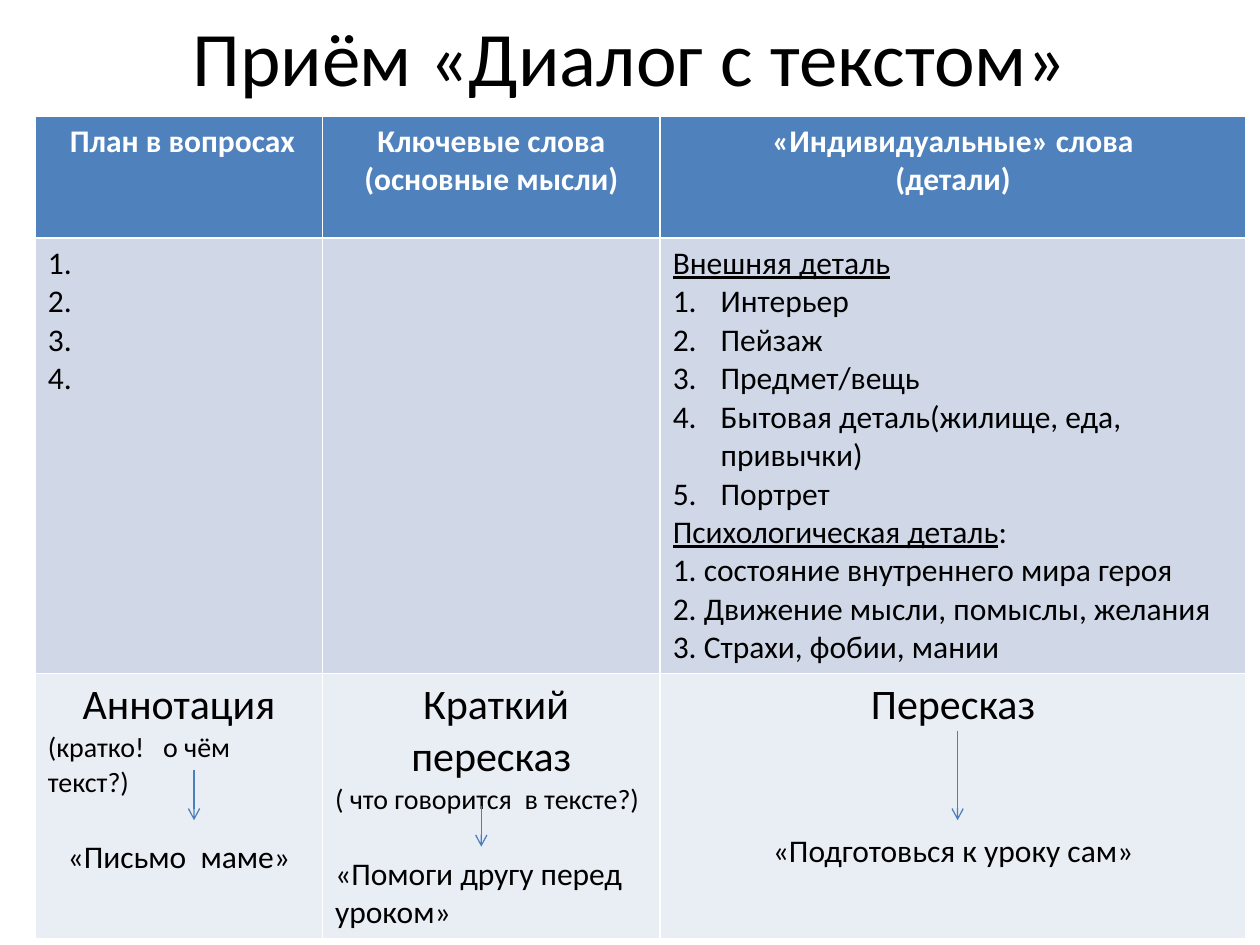
"""Build the slide on the "dialogue with the text" reading technique."""
from dataclasses import dataclass

from lxml import etree
from pptx import Presentation
from pptx.dml.color import RGBColor
from pptx.enum import shapes, text
from pptx.oxml import ns
from pptx.util import Inches, Pt


@dataclass(frozen=True)
class Theme:
    font: str = "Calibri"
    ink: str = "000000"
    header_ink: str = "FFFFFF"
    row_fills: tuple = ("4F81BD", "D0D8E8", "E9EDF4")
    arrow: str = "4B7EBC"
    title: int = 44
    heading: int = 24
    body: int = 18
    note: int = 16


theme = Theme()
CENTER, LEFT = text.PP_ALIGN.CENTER, text.PP_ALIGN.LEFT


def add_run(paragraph, content, size, color=theme.ink, bold=False, underline=False):
    run = paragraph.add_run()
    run.text = content
    font = run.font
    font.name, font.size, font.bold, font.underline = theme.font, Pt(size), bold, underline
    font.color.rgb = RGBColor.from_string(color)


def add_paragraph(frame, alignment=LEFT, gap=0):
    first = frame.paragraphs[0]
    paragraph = frame.add_paragraph() if first.runs else first
    paragraph.alignment = alignment
    if gap:
        paragraph.space_before = Pt(gap)
    return paragraph


presentation = Presentation()
presentation.slide_width, presentation.slide_height = Inches(10), Inches(7.5)
slide = presentation.slides.add_slide(presentation.slide_layouts[5])

title = slide.shapes.title
title.left, title.top = Inches(0.5), Inches(-0.11)
title.width, title.height = Inches(9), Inches(1.1)
title.text_frame.vertical_anchor = text.MSO_ANCHOR.MIDDLE
add_run(add_paragraph(title.text_frame, CENTER), "Приём «Диалог с текстом»", theme.title)

column_widths = (2.28, 2.68, 4.65)
row_heights = (0.97, 3.44, 2.07)
table = slide.shapes.add_table(
    len(row_heights), len(column_widths), Inches(0.28), Inches(0.92),
    Inches(sum(column_widths)), Inches(sum(row_heights))).table
for column, width in zip(table.columns, column_widths):
    column.width = Inches(width)
for row, height, fill in zip(table.rows, row_heights, theme.row_fills):
    row.height = Inches(height)
    for cell in row.cells:
        cell.fill.solid()
        cell.fill.fore_color.rgb = RGBColor.from_string(fill)

headers = (
    (" План в вопросах",),
    ("Ключевые слова", "(основные мысли)"),
    ("«Индивидуальные» слова", "(детали)"),
)
for column, lines in enumerate(headers):
    for line in lines:
        paragraph = add_paragraph(table.cell(0, column).text_frame, CENTER)
        add_run(paragraph, line, theme.body, theme.header_ink, bold=True)

plan_frame = table.cell(1, 0).text_frame
for number in range(1, 5):
    add_run(add_paragraph(plan_frame), f"{number}.", theme.body)

details_frame = table.cell(1, 2).text_frame
add_run(add_paragraph(details_frame), "Внешняя деталь", theme.body, underline=True)
outer_details = ("Интерьер", "Пейзаж", "Предмет/вещь",
                 "Бытовая деталь(жилище, еда, привычки)", "Портрет")
for detail in outer_details:
    paragraph = add_paragraph(details_frame)
    add_run(paragraph, detail, theme.body)
    properties = paragraph._p.get_or_add_pPr()
    properties.set("marL", str(Inches(0.38)))
    properties.set("indent", str(Inches(-0.38)))
    etree.SubElement(properties, ns.qn("a:buFont"), typeface="+mj-lt")
    etree.SubElement(properties, ns.qn("a:buAutoNum"), type="arabicPeriod")
paragraph = add_paragraph(details_frame)
add_run(paragraph, "Психологическая деталь", theme.body, underline=True)
add_run(paragraph, ":", theme.body)
inner_details = ("состояние внутреннего мира героя",
                 "Движение мысли, помыслы, желания", "Страхи, фобии, мании")
for number, detail in enumerate(inner_details, 1):
    add_run(add_paragraph(details_frame), f"{number}. {detail}", theme.body)

retellings = (
    ("Аннотация", "(кратко!   о чём текст?)", "«Письмо  маме»", CENTER, 22),
    (" Краткий пересказ", "( что говорится  в тексте?)", "«Помоги другу перед уроком»", LEFT, 22),
    ("Пересказ", None, "«Подготовься к уроку сам»", CENTER, 58),
)
for column, (heading, note, task, alignment, gap) in enumerate(retellings):
    frame = table.cell(2, column).text_frame
    add_run(add_paragraph(frame, CENTER), heading, theme.heading)
    if note:
        add_run(add_paragraph(frame), note, theme.note)
    add_run(add_paragraph(frame, alignment, gap), task, theme.body)

for x, top, bottom in ((1.54, 6.11, 6.51), (3.82, 6.4, 6.72), (7.6, 5.8, 6.51)):
    arrow = slide.shapes.add_connector(
        shapes.MSO_CONNECTOR.STRAIGHT, Inches(x), Inches(top), Inches(x), Inches(bottom))
    arrow.line.color.rgb = RGBColor.from_string(theme.arrow)
    arrow.line.width = Pt(0.75)
    etree.SubElement(arrow.line._get_or_add_ln(), ns.qn("a:tailEnd"), type="arrow")
    etree.SubElement(arrow._element.spPr, ns.qn("a:effectLst"))

presentation.save("out.pptx")
